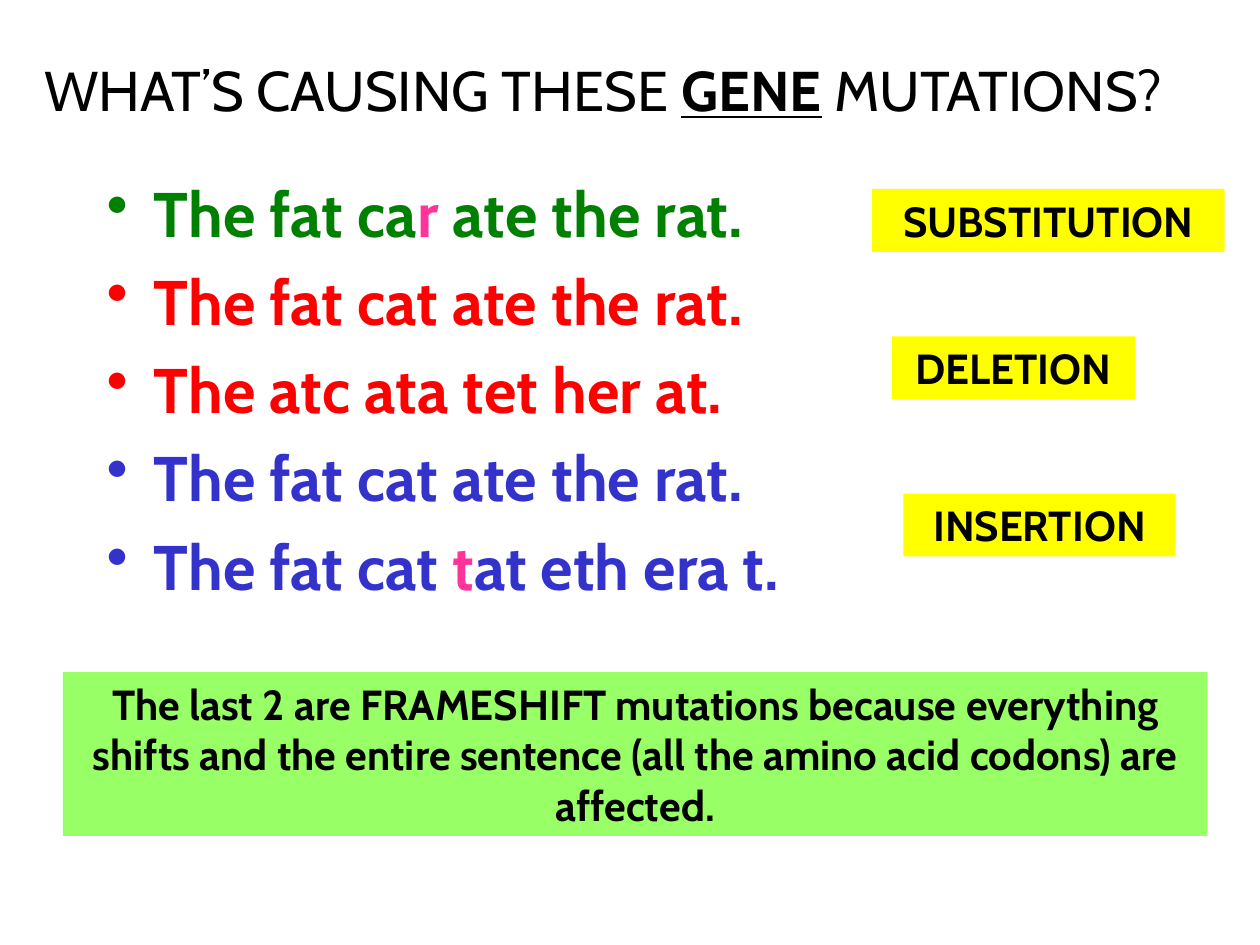
from pptx import Presentation
from pptx import util as u
from pptx.dml.color import RGBColor
from pptx.enum import shapes, text
from pptx.oxml.ns import qn
from lxml import etree

THEME = {
    "font": "Cabin",
    "title_size": 32, "sentence_size": 36, "label_size": 24,
    "black": "000000", "green": "008000", "red": "FF0000", "blue": "3333CC",
    "pink": "FF3399", "yellow": "FFFF00", "lime": "99FF66",
}

# Runs are (wording, emphasised).
TITLE = [("WHAT’S CAUSING THESE ", False), ("GENE", True), (" MUTATIONS?", False)]
SENTENCES = [
    ("green", [("The fat ca", False), ("r", True), (" ate the rat.", False)]),
    ("red", [("The fat cat ate the rat.", False)]),
    ("red", [("The atc ata tet her at.", False)]),
    ("blue", [("The fat cat ate the rat.", False)]),
    ("blue", [("The fat cat ", False), ("t", True), ("at eth era t.", False)]),
]
# Wording, fill, (left, top, width, height) in cm.
LABELS = [
    ("SUBSTITUTION", "yellow", (17.58, 3.81, 7.11, 1.27)),
    ("DELETION", "yellow", (17.98, 6.78, 4.9, 1.27)),
    ("INSERTION", "yellow", (18.21, 9.95, 5.49, 1.27)),
    ("The last 2 are FRAMESHIFT mutations because everything shifts and the "
     "entire sentence (all the amino acid codons) are affected.",
     "lime", (1.27, 13.55, 23.07, 3.3)),
]
TITLE_AREA = (0, 0.84, 24.33, 1.91)
SENTENCES_AREA = (1.9, 3.39, 21.6, 13.55)
BULLET_INDENT = u.Cm(0.95)


def color(name):
    return RGBColor.from_string(THEME[name])


def style(para, size, color_name, bold=False):
    font = para.font
    font.name = THEME["font"]
    font.size = u.Pt(THEME[size])
    font.bold = bold
    font.color.rgb = color(color_name)


def add_text_box(slide, area):
    box = slide.shapes.add_textbox(*map(u.Cm, area))
    box.text_frame.word_wrap = True
    return box.text_frame


def add_spans(para, runs, emphasise):
    for wording, emphasised in runs:
        span = para.add_run()
        span.text = wording
        if emphasised:
            emphasise(span.font)


def underline_bold(font):
    font.bold = font.underline = True


def turn_pink(font):
    font.color.rgb = color("pink")


def add_bullet(para, color_name):
    """Give the paragraph a coloured round bullet with a hanging indent."""
    props = para._p.get_or_add_pPr()
    props.set("marL", str(BULLET_INDENT))
    props.set("indent", str(-BULLET_INDENT))
    bullet_color = etree.Element(qn("a:buClr"))
    etree.SubElement(bullet_color, qn("a:srgbClr"), val=THEME[color_name])
    bullet = etree.Element(qn("a:buChar"), char="•")
    defaults = props.find(qn("a:defRPr"))
    defaults.addprevious(bullet_color)
    defaults.addprevious(bullet)


def add_title(slide):
    frame = add_text_box(slide, TITLE_AREA)
    frame.vertical_anchor = text.MSO_ANCHOR.MIDDLE
    para = frame.paragraphs[0]
    para.alignment = text.PP_ALIGN.CENTER
    style(para, "title_size", "black")
    add_spans(para, TITLE, underline_bold)


def add_sentences(slide):
    frame = add_text_box(slide, SENTENCES_AREA)
    for index, (color_name, runs) in enumerate(SENTENCES):
        para = frame.add_paragraph() if index else frame.paragraphs[0]
        para.space_before = u.Pt(7.2 if index else 0)
        style(para, "sentence_size", color_name, bold=True)
        add_bullet(para, color_name)
        add_spans(para, runs, turn_pink)


def add_label(slide, wording, fill, area):
    label = slide.shapes.add_shape(shapes.MSO_SHAPE.RECTANGLE, *map(u.Cm, area))
    label.shadow.inherit = False
    label.fill.solid()
    label.fill.fore_color.rgb = color(fill)
    label.line.fill.background()
    frame = label.text_frame
    frame.word_wrap = True
    frame.vertical_anchor = text.MSO_ANCHOR.TOP
    para = frame.paragraphs[0]
    para.text = wording
    para.alignment = text.PP_ALIGN.CENTER
    style(para, "label_size", "black", bold=True)


def main():
    deck = Presentation()
    deck.slide_width, deck.slide_height = u.Cm(25.4), u.Cm(19.05)
    page = deck.slides.add_slide(deck.slide_layouts[6])
    add_title(page)
    add_sentences(page)
    for label in LABELS:
        add_label(page, *label)
    deck.save("out.pptx")


if __name__ == "__main__":
    main()
